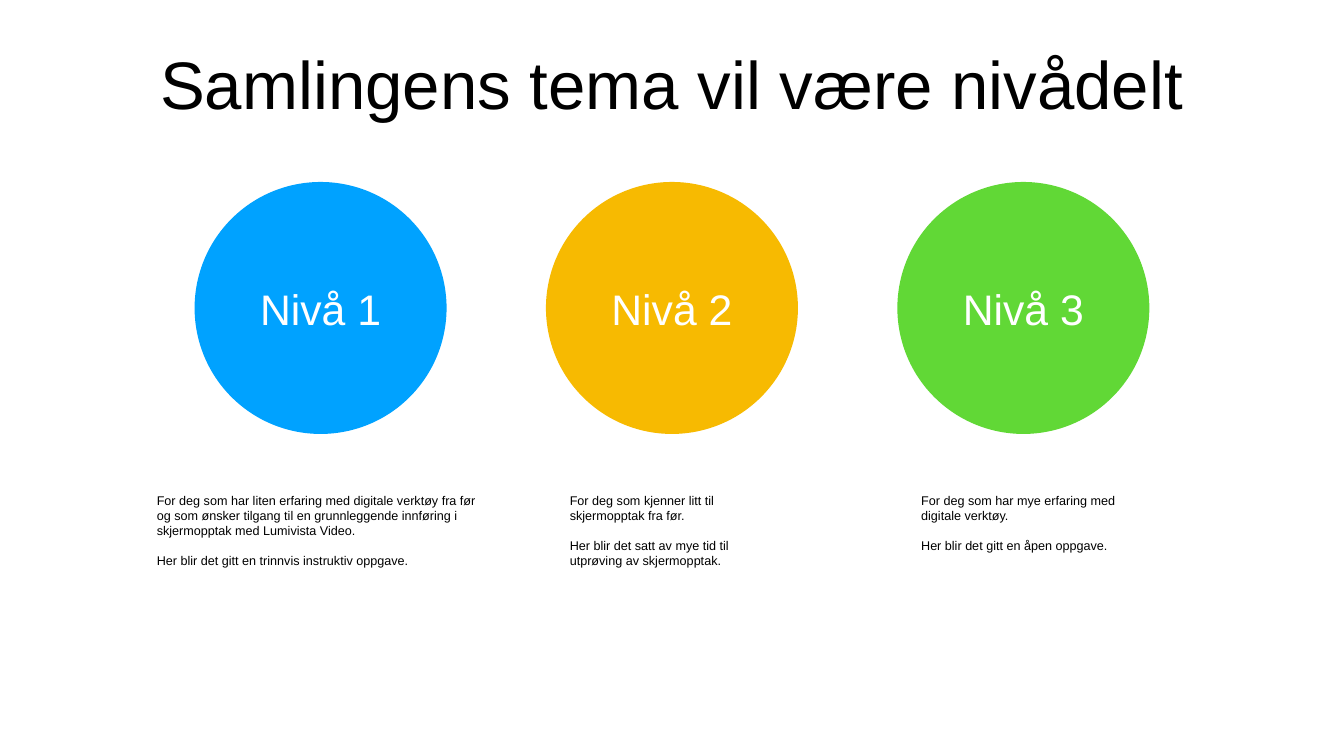
from pptx import Presentation
from pptx import util as u
from pptx.dml.color import RGBColor
from pptx.enum import shapes, text

SLIDE_WIDTH, SLIDE_HEIGHT = 960, 540
LEVEL_PITCH = 251
CIRCLE_SIZE = 180
DESCRIPTION_TOP = 220

TITLE_FORMAT = {"size": u.Pt(48), "name": "Arial"}
LEVEL_FORMAT = {"size": u.Pt(30.5), "name": "Arial"}
DESCRIPTION_FORMAT = {"size": u.Pt(9), "name": "Arial"}

LEVELS = [
    ("Nivå 1", "00A2FF", 238, [
        "For deg som har liten erfaring med digitale verktøy fra før og som ønsker "
        "tilgang til en grunnleggende innføring i skjermopptak med Lumivista Video.",
        "Her blir det gitt en trinnvis instruktiv oppgave.",
    ]),
    ("Nivå 2", "F7BA01", 150, [
        "For deg som kjenner litt til skjermopptak fra før.",
        "Her blir det satt av mye tid til utprøving av skjermopptak.",
    ]),
    ("Nivå 3", "61D836", 150, [
        "For deg som har mye erfaring med digitale verktøy.",
        "Her blir det gitt en åpen oppgave.",
    ]),
]


def color(hex_value):
    return RGBColor.from_string(hex_value)


def points(*lengths):
    return [u.Pt(length) for length in lengths]


def write_text(shape, paragraphs, font_format, hex_value, margin, alignment, anchor, gap=0):
    frame = shape.text_frame
    frame_format = {"word_wrap": True, "vertical_anchor": anchor}
    for side in ("left", "top", "right", "bottom"):
        frame_format[f"margin_{side}"] = u.Pt(margin)
    for name, value in frame_format.items():
        setattr(frame, name, value)
    for index, content in enumerate(paragraphs):
        paragraph = frame.add_paragraph() if index else frame.paragraphs[0]
        paragraph.text = content
        paragraph.alignment = alignment
        if index:
            paragraph.space_before = u.Pt(gap)
        for name, value in font_format.items():
            setattr(paragraph.font, name, value)
        paragraph.font.color.rgb = color(hex_value)


def add_title(slide, left, top, width, height):
    title = slide.shapes.add_textbox(*points(left, top, width, height))
    write_text(title, ["Samlingens tema vil være nivådelt"], TITLE_FORMAT, "000000", 4,
               text.PP_ALIGN.CENTER, text.MSO_ANCHOR.MIDDLE)


def add_level(slide, center, top, height, level):
    name, fill, description_width, paragraphs = level
    circle = slide.shapes.add_shape(
        shapes.MSO_SHAPE.OVAL,
        *points(center - CIRCLE_SIZE / 2, top, CIRCLE_SIZE, CIRCLE_SIZE))
    circle.shadow.inherit = False
    circle.fill.solid()
    circle.fill.fore_color.rgb = color(fill)
    circle.line.fill.background()
    write_text(circle, [name], LEVEL_FORMAT, "FFFFFF", 0,
               text.PP_ALIGN.CENTER, text.MSO_ANCHOR.MIDDLE)

    description = slide.shapes.add_textbox(
        *points(center - description_width / 2, top + DESCRIPTION_TOP,
                description_width, height - DESCRIPTION_TOP))
    write_text(description, paragraphs, DESCRIPTION_FORMAT, "000000", 2,
               text.PP_ALIGN.LEFT, text.MSO_ANCHOR.TOP, gap=10.8)


def add_levels(slide, left, top, width, height):
    middle = left + width / 2
    for index, level in enumerate(LEVELS):
        center = middle + (index - (len(LEVELS) - 1) / 2) * LEVEL_PITCH
        add_level(slide, center, top, height, level)


def main():
    presentation = Presentation()
    presentation.slide_width, presentation.slide_height = points(SLIDE_WIDTH, SLIDE_HEIGHT)
    slide = presentation.slides.add_slide(presentation.slide_layouts[6])
    add_title(slide, 66, 14, 828, 90)
    add_levels(slide, 66, 130, 828, 400)
    presentation.save("out.pptx")


if __name__ == "__main__":
    main()
